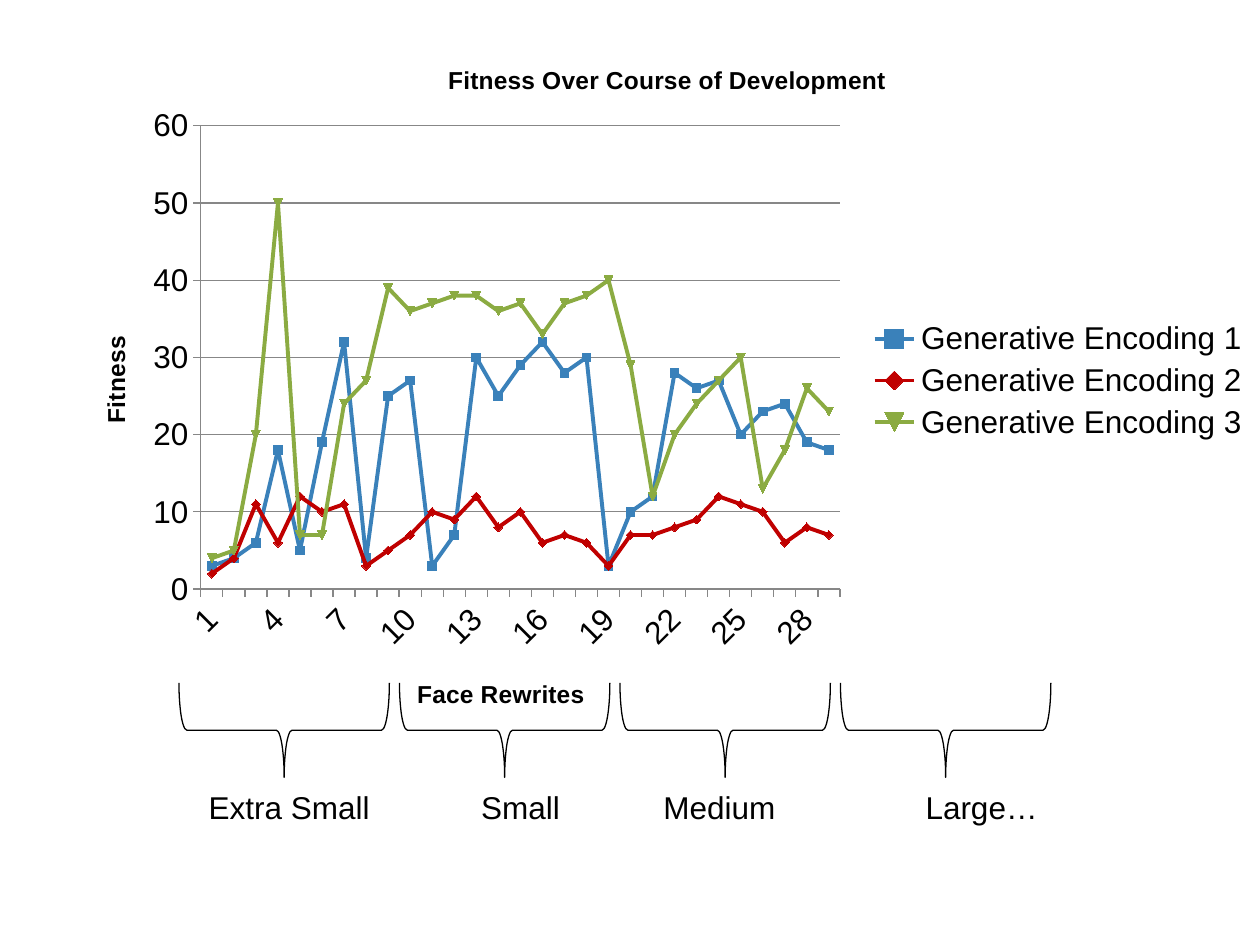
from dataclasses import dataclass

import pptx
import pptx.chart.data
import pptx.dml.color
import pptx.enum.chart
import pptx.enum.shapes
import pptx.enum.text
import pptx.oxml
import pptx.oxml.ns
import pptx.util
from pptx.util import Inches

COLORS = {
    "text": "000000",
    "axis": "878787",
    "blue": "3A81BA",
    "red": "C00000",
    "green": "8BAB42",
}
FONT = "Arial"


@dataclass
class Encoding:
    name: str
    color: str
    fitness: list[int]


@dataclass
class SizeGroup:
    label: str
    left: float
    width: float


ENCODINGS = [
    Encoding("Generative Encoding 1", "blue",
             [3, 4, 6, 18, 5, 19, 32, 4, 25, 27, 3, 7, 30, 25, 29,
              32, 28, 30, 3, 10, 12, 28, 26, 27, 20, 23, 24, 19, 18]),
    Encoding("Generative Encoding 2", "red",
             [2, 4, 11, 6, 12, 10, 11, 3, 5, 7, 10, 9, 12, 8, 10,
              6, 7, 6, 3, 7, 7, 8, 9, 12, 11, 10, 6, 8, 7]),
    Encoding("Generative Encoding 3", "green",
             [4, 5, 20, 50, 7, 7, 24, 27, 39, 36, 37, 38, 38, 36, 37,
              33, 37, 38, 40, 29, 12, 20, 24, 27, 30, 13, 18, 26, 23]),
]
SIZE_GROUPS = [
    SizeGroup("Extra Small", 1.42, 1.75),
    SizeGroup("Small", 3.42, 1.42),
    SizeGroup("Medium", 4.75, 1.92),
    SizeGroup("Large…", 6.83, 1.92),
]
BRACE_WIDTH, BRACE_HEIGHT = 0.75, 1.67  # before the quarter turn
BRACE_LEFT, BRACE_TOP, BRACE_STEP = 1.88, 4.96, 1.75


def rgb(name: str) -> pptx.dml.color.RGBColor:
    return pptx.dml.color.RGBColor.from_string(COLORS[name])


def format_font(font, size: int, bold: bool = False) -> None:
    values = {"name": FONT, "size": pptx.util.Pt(size), "bold": bold}
    for attribute, value in values.items():
        setattr(font, attribute, value)
    font.color.rgb = rgb("text")


def format_line(line, color: str, width: float) -> None:
    line.color.rgb = rgb(color)
    line.width = pptx.util.Pt(width)


def place(element, index: int, **fractions: float) -> None:
    """Give a chart part a manual layout, as fractions of the chart."""
    for old in element.findall(pptx.oxml.ns.qn("c:layout")):
        element.remove(old)
    target = '<c:layoutTarget val="inner"/>' if "w" in fractions else ""
    modes = "".join(f'<c:{key}Mode val="edge"/>' for key in "xy")
    values = "".join(f'<c:{key} val="{value}"/>' for key, value in fractions.items())
    element.insert(index, pptx.oxml.parse_xml(
        f'<c:layout {pptx.oxml.ns.nsdecls("c")}><c:manualLayout>'
        f"{target}{modes}{values}</c:manualLayout></c:layout>"))


def add_title(owner, title, text: str, x: float, y: float) -> None:
    title.text_frame.text = text
    format_font(title.text_frame.paragraphs[0].runs[0].font, 14, bold=True)
    place(title._element, 1, x=x, y=y)


def add_fitness_chart(slide) -> None:
    data = pptx.chart.data.CategoryChartData()
    data.categories = [str(n) for n in range(1, len(ENCODINGS[0].fitness) + 1)]
    for encoding in ENCODINGS:
        data.add_series(encoding.name, encoding.fitness)
    chart = slide.shapes.add_chart(
        pptx.enum.chart.XL_CHART_TYPE.LINE_MARKERS,
        Inches(0.52), Inches(0.25), Inches(9.5), Inches(5.54), data).chart
    format_font(chart.font, 18)
    place(chart._chartSpace.chart.plotArea, 0, x=0.113, y=0.135, w=0.534, h=0.664)

    # Lines and markers
    chart.plots[0].vary_by_categories = False
    for series, encoding in zip(chart.plots[0].series, ENCODINGS):
        series.smooth = False
        format_line(series.format.line, encoding.color, 2.25)
        marker = series.marker
        marker.style = pptx.enum.chart.XL_MARKER_STYLE.AUTOMATIC
        marker.size = 5
        marker.format.fill.solid()
        marker.format.fill.fore_color.rgb = rgb(encoding.color)
        format_line(marker.format.line, encoding.color, 0.75)

    # Axes
    fitness, rewrites = chart.value_axis, chart.category_axis
    axis_values = {
        "major_tick_mark": pptx.enum.chart.XL_TICK_MARK.OUTSIDE,
        "minor_tick_mark": pptx.enum.chart.XL_TICK_MARK.NONE,
    }
    for axis in (fitness, rewrites):
        for attribute, value in axis_values.items():
            setattr(axis, attribute, value)
        format_line(axis.format.line, "axis", 0.75)
        format_font(axis.tick_labels.font, 18)
    scale = {"minimum_scale": 0, "maximum_scale": 60, "major_unit": 10}
    for attribute, value in scale.items():
        setattr(fitness, attribute, value)
    format_line(fitness.major_gridlines.format.line, "axis", 0.75)
    label_body = rewrites._element.find(
        f'{pptx.oxml.ns.qn("c:txPr")}/{pptx.oxml.ns.qn("a:bodyPr")}')
    label_body.set("rot", str(-45 * 60000))

    # Titles and legend
    chart.has_title = True
    add_title(chart, chart.chart_title, "Fitness Over Course of Development", 0.316, 0.04)
    add_title(rewrites, rewrites.axis_title, "Face Rewrites", 0.29, 0.92)
    add_title(fitness, fitness.axis_title, "Fitness", 0.025, 0.43)
    fitness_body = fitness.axis_title.text_frame._txBody.bodyPr
    fitness_body.set("rot", str(-90 * 60000))
    fitness_body.set("vert", "horz")
    chart.has_legend = True
    chart.legend.position = pptx.enum.chart.XL_LEGEND_POSITION.RIGHT
    chart.legend.include_in_layout = False
    format_font(chart.legend.font, 18)


def add_size_label(slide, group: SizeGroup) -> None:
    frame = slide.shapes.add_textbox(
        Inches(group.left), Inches(6.15), Inches(group.width), Inches(0.68)).text_frame
    frame.word_wrap = True
    for side in ("left", "top", "right", "bottom"):
        setattr(frame, f"margin_{side}", Inches(0.1))
    paragraph = frame.paragraphs[0]
    paragraph.alignment = pptx.enum.text.PP_ALIGN.CENTER
    run = paragraph.add_run()
    run.text = group.label
    format_font(run.font, 18)


def add_size_brace(slide, index: int) -> None:
    brace = slide.shapes.add_shape(
        pptx.enum.shapes.MSO_SHAPE.RIGHT_BRACE,
        Inches(BRACE_LEFT + index * BRACE_STEP), Inches(BRACE_TOP),
        Inches(BRACE_WIDTH), Inches(BRACE_HEIGHT))
    brace.rotation = 90
    brace.shadow.inherit = False
    brace.fill.background()
    format_line(brace.line, "text", 0.75)


def main() -> None:
    deck = pptx.Presentation()
    deck.slide_width, deck.slide_height = Inches(10), Inches(7.5)
    slide = deck.slides.add_slide(deck.slide_layouts[6])
    add_fitness_chart(slide)
    for group in SIZE_GROUPS:
        add_size_label(slide, group)
    for index in range(len(SIZE_GROUPS)):
        add_size_brace(slide, index)
    deck.save("out.pptx")


if __name__ == "__main__":
    main()
